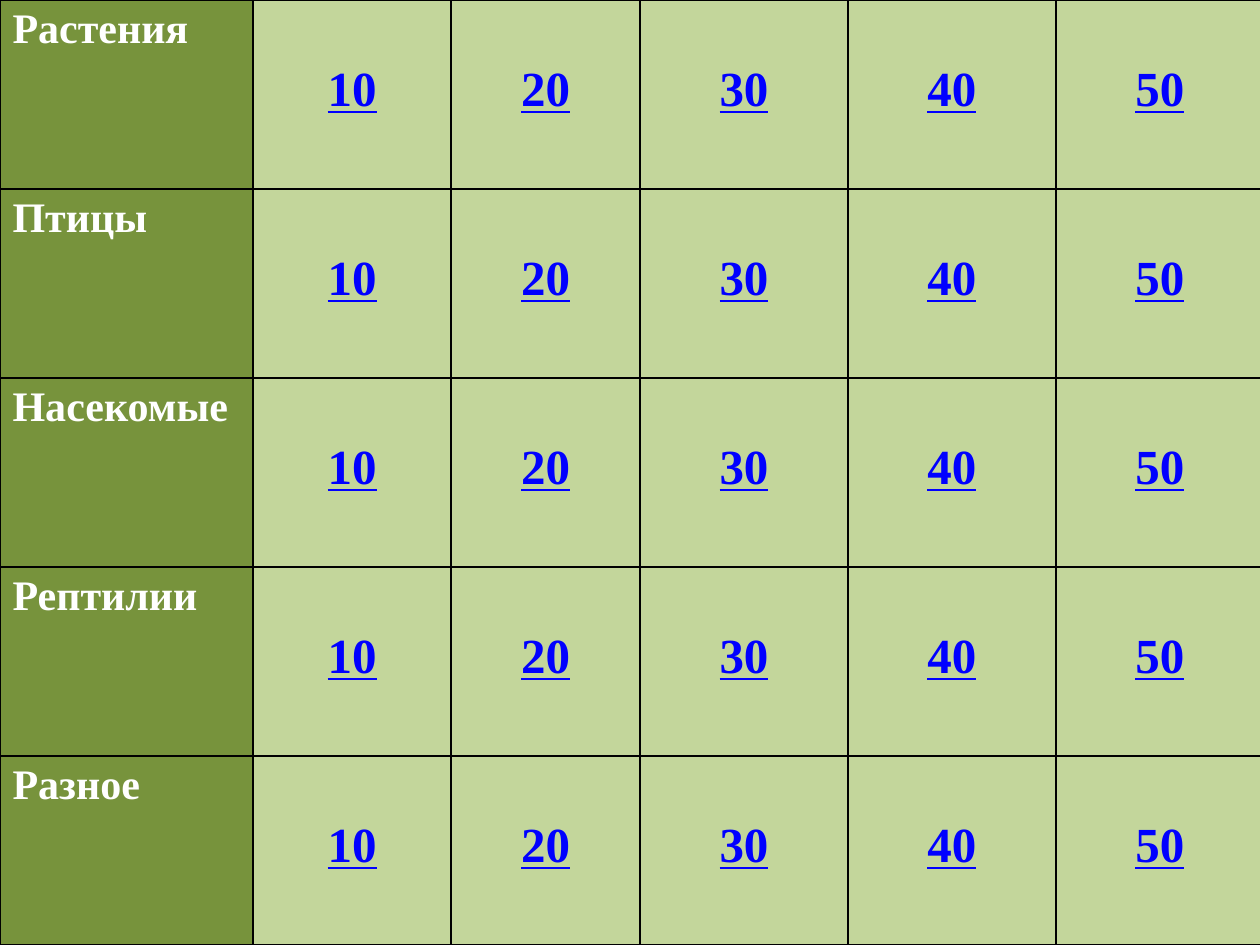
import pptx
import pptx.util
import pptx.dml.color
import pptx.enum.text
from lxml import etree
from pptx.oxml.ns import qn

Inches, Pt = pptx.util.Inches, pptx.util.Pt
ALIGN = pptx.enum.text.PP_ALIGN

# Content
topics = ["Растения", "Птицы", "Насекомые", "Рептилии", "Разное"]
points = ["10", "20", "30", "40", "50"]

# Layout and formats
column_widths = [2.01, 1.57, 1.5, 1.65, 1.65, 1.65]
row_height = 1.5
topic_format = {
    "fill": "77933C", "color": "FFFFFF", "align": ALIGN.LEFT, "top": 0.05,
    "font": {"name": "Times New Roman", "size": Pt(24), "bold": True, "underline": False},
}
points_format = {
    "fill": "C3D69B", "color": "0000FF", "align": ALIGN.CENTER, "top": 0.5,
    "font": {"name": "Times New Roman", "size": Pt(28), "bold": True, "underline": True},
}


def set_color(target, hex_color):
    target.rgb = pptx.dml.color.RGBColor.from_string(hex_color)


def add_borders(cell, hex_color="000000", width=1):
    properties = cell._tc.get_or_add_tcPr()
    for side in ("lnL", "lnR", "lnT", "lnB"):
        line = etree.SubElement(properties, qn(f"a:{side}"), w=str(Pt(width)))
        fill = etree.SubElement(line, qn("a:solidFill"))
        etree.SubElement(fill, qn("a:srgbClr"), val=hex_color)


def fill_cell(cell, text, style):
    add_borders(cell)
    cell.fill.solid()
    set_color(cell.fill.fore_color, style["fill"])
    cell.margin_top = Inches(style["top"])
    cell.text = text
    paragraph = cell.text_frame.paragraphs[0]
    paragraph.alignment = style["align"]
    font = paragraph.runs[0].font
    for attribute, value in style["font"].items():
        setattr(font, attribute, value)
    set_color(font.color, style["color"])


def main():
    deck = pptx.Presentation()
    deck.slide_width, deck.slide_height = Inches(10), Inches(7.5)
    slide = deck.slides.add_slide(deck.slide_layouts[6])

    # Game board
    board = slide.shapes.add_table(
        len(topics), len(column_widths), 0, 0,
        Inches(sum(column_widths)), Inches(row_height * len(topics))).table
    for column, width in zip(board.columns, column_widths):
        column.width = Inches(width)

    # One row per topic
    for row, topic in enumerate(topics):
        board.rows[row].height = Inches(row_height)
        fill_cell(board.cell(row, 0), topic, topic_format)
        for column, value in enumerate(points, start=1):
            fill_cell(board.cell(row, column), value, points_format)

    deck.save("out.pptx")


if __name__ == "__main__":
    main()
